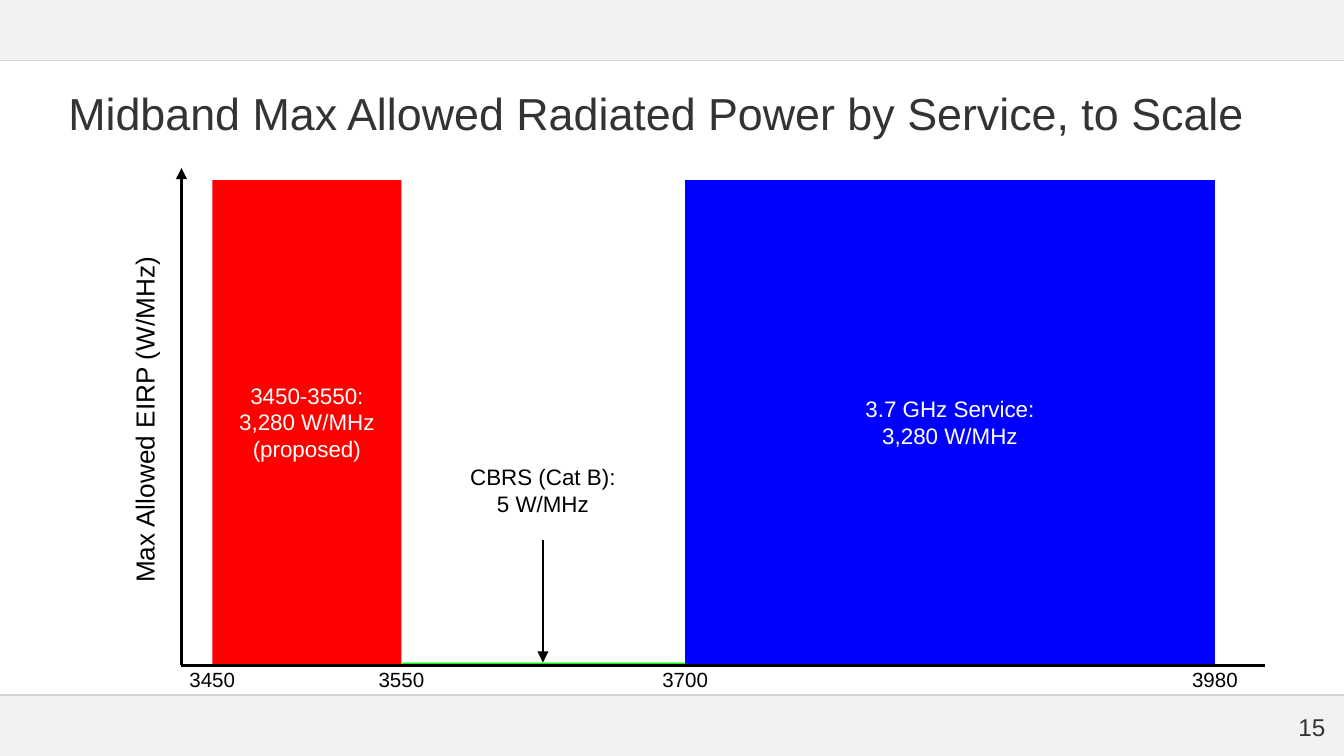
import pptx
import pptx.util
import pptx.dml.color
import pptx.enum.shapes
import pptx.enum.text
import pptx.oxml.ns
from dataclasses import dataclass
from lxml import etree

Inches = pptx.util.Inches
Align = pptx.enum.text.PP_ALIGN
Anchor = pptx.enum.text.MSO_ANCHOR
qn = pptx.oxml.ns.qn


@dataclass(frozen=True)
class Theme:
    font: str = "Arial"
    band: str = "F2F2F2"
    rule: str = "D4D4D4"
    dark: str = "333336"
    black: str = "000000"
    white: str = "FFFFFF"
    red: str = "FF0000"
    green: str = "00FF00"
    blue: str = "0000FF"
    title: int = 24
    axis: int = 14
    page: int = 13
    label: int = 12
    tick: int = 11


theme = Theme()
deck = pptx.Presentation()
deck.slide_width = Inches(10)
deck.slide_height = Inches(10 * 9 / 16)
slide = deck.slides.add_slide(deck.slide_layouts[6])
shapes = slide.shapes


def write(shape, text, size, color, align=Align.CENTER, anchor=Anchor.TOP, inset=0.1):
    """Set the text; a vertical tab breaks a line inside a paragraph."""
    frame = shape.text_frame
    frame.word_wrap = True
    frame.vertical_anchor = anchor
    frame.margin_left = frame.margin_right = Inches(inset)
    frame.margin_top = frame.margin_bottom = Inches(inset)
    frame.text = text
    for para in frame.paragraphs:
        para.alignment = align
        for run in para.runs:
            run.font.name = theme.font
            run.font.size = pptx.util.Pt(size)
            run.font.color.rgb = pptx.dml.color.RGBColor.from_string(color)
        for gap in para._p.findall(qn("a:br")):
            etree.SubElement(gap, qn("a:rPr"), sz=str(size * 100))


def draw(start, end, color, width, arrow=False):
    """Add a straight line, with an arrowhead at its end if asked."""
    line = shapes.add_connector(
        pptx.enum.shapes.MSO_CONNECTOR.STRAIGHT, *map(Inches, start + end))
    line.line.color.rgb = pptx.dml.color.RGBColor.from_string(color)
    line.line.width = pptx.util.Pt(width)
    props = line._element.spPr
    if arrow:
        etree.SubElement(props.find(qn("a:ln")), qn("a:tailEnd"), type="triangle")
    etree.SubElement(props, qn("a:effectLst"))


# Header and footer bands
blocks = [(0, 0, 10, 0.45, theme.band, ""), (0, 5.17, 10, 0.46, theme.band, "")]

# Frequency (MHz) runs along the axis, power (W/MHz) up from the base
left, base, first = 1.58, 4.94, 3450
wide = (9.04 - left) / (3980 - first)
tall = 3.6 / 3280
bars = [
    (3450, 3550, 3280, theme.red, "3450-3550:\n3,280 W/MHz\v(proposed)"),
    (3550, 3700, 5, theme.green, ""),
    (3700, 3980, 3280, theme.blue, "3.7 GHz Service:\n3,280 W/MHz"),
]
for low, high, power, color, text in bars:
    rise = max(power * tall, 0.01)
    blocks.append((left + (low - first) * wide, base - rise,
                   (high - low) * wide, rise, color, text))

for *place, color, text in blocks:
    block = shapes.add_shape(
        pptx.enum.shapes.MSO_SHAPE.RECTANGLE, *map(Inches, place))
    block.shadow.inherit = False
    block.fill.solid()
    block.fill.fore_color.rgb = pptx.dml.color.RGBColor.from_string(color)
    block.line.fill.background()
    if text:
        write(block, text, theme.label, theme.white, anchor=Anchor.MIDDLE)

for y in (0.45, 5.17):
    draw((0, y), (10, y), theme.rule, 1)

# Title, page number and labels
title = shapes.add_textbox(*map(Inches, (0.41, 0.54, 9, 0.71)))
write(title, "Midband Max Allowed Radiated Power by Service, to Scale",
      theme.title, theme.dark, Align.LEFT)

page = shapes.add_textbox(*map(Inches, (9.36, 5.19, 0.6, 0.43)))
write(page, "15", theme.page, theme.dark, Align.RIGHT, Anchor.MIDDLE)

axis = shapes.add_textbox(*map(Inches, (-0.66, 2.85, 3.58, 0.55)))
axis.rotation = 270
write(axis, "Max Allowed EIRP (W/MHz)", theme.axis, theme.black)

note = shapes.add_textbox(*map(Inches, (3.39, 3.35, 1.3, 0.67)))
write(note, "CBRS (Cat B):\v5 W/MHz", theme.label, theme.black)
draw((4.04, 4.02), (4.04, 4.93), theme.black, 0.75, arrow=True)

# Axes and ticks
draw((1.35, 4.95), (1.35, 1.25), theme.black, 1.5, arrow=True)
draw((1.35, 4.95), (9.41, 4.95), theme.black, 1.5)
for freq in (3450, 3550, 3700, 3980):
    mid = left + (freq - first) * wide
    tick = shapes.add_textbox(*map(Inches, (mid - 0.4, 4.96, 0.8, 0.17)))
    write(tick, str(freq), theme.tick, theme.black, inset=0)

deck.save("out.pptx")
